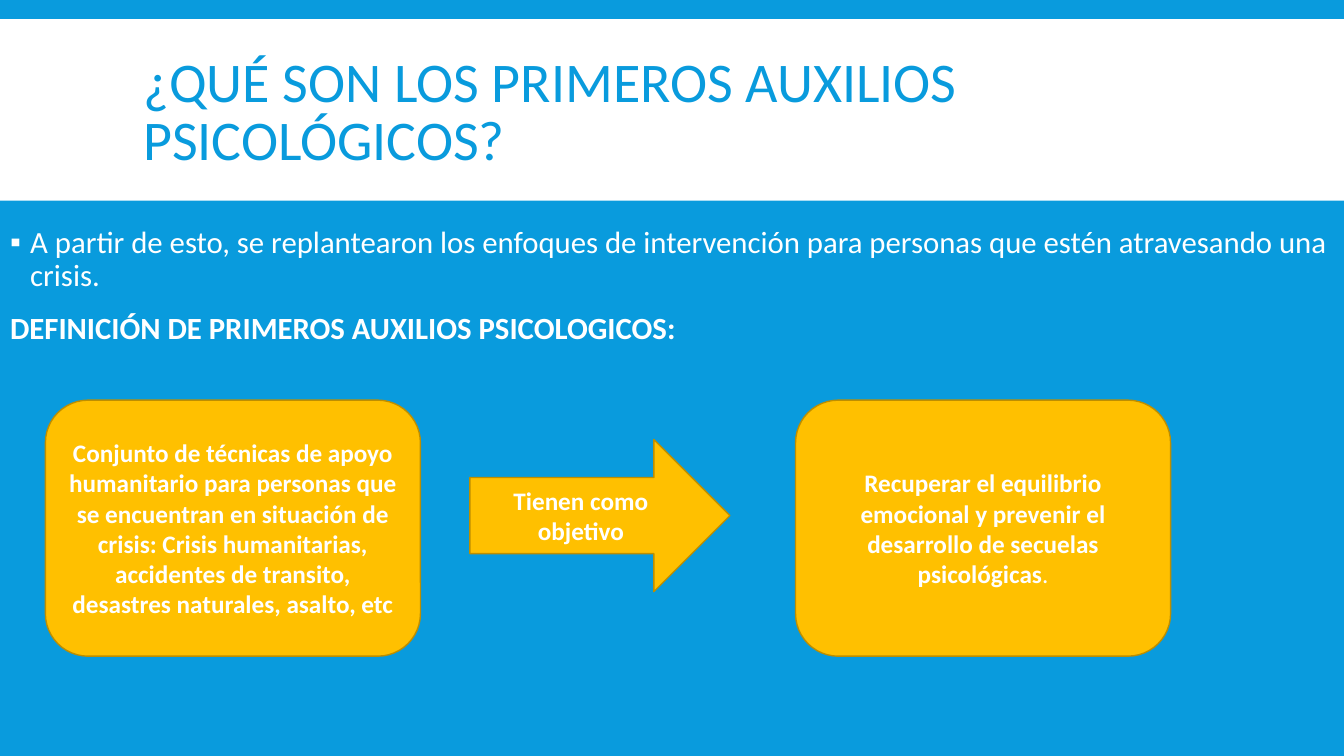
from dataclasses import dataclass

from lxml.etree import SubElement
from pptx import Presentation
from pptx.dml.color import RGBColor as Rgb
from pptx.enum.shapes import MSO_SHAPE as Kind
from pptx.enum.text import MSO_ANCHOR as Anchor, MSO_AUTO_SIZE as Fit, PP_ALIGN as Align
from pptx.oxml.ns import qn
from pptx.util import Inches, Pt


@dataclass(frozen=True)
class Theme:
    font: str = "Calibri"
    blue: str = "099BDD"
    white: str = "FFFFFF"
    gold: str = "FFC000"
    edge: str = "BD8E00"
    head: int = 40
    text: int = 22
    label: int = 18


class Deck:
    def __init__(self, theme):
        self.theme = theme
        self.prs = Presentation()
        self.prs.slide_width, self.prs.slide_height = Inches(13.33), Inches(7.5)
        self.slide = self.prs.slides.add_slide(self.prs.slide_layouts[1])
        back = self.slide.background.fill
        back.solid()
        back.fore_color.rgb = Rgb.from_string(theme.blue)

    def place(self, shape, box):
        shape.left, shape.top, shape.width, shape.height = map(Inches, box)

    def run(self, para, text, size, color, bold=False):
        run = para.add_run()
        run.text = text
        font = run.font
        font.name, font.size, font.bold = self.theme.font, Pt(size), bold
        font.color.rgb = Rgb.from_string(color)

    def shape(self, kind, box, fill, line=None):
        shape = self.slide.shapes.add_shape(kind, *map(Inches, box))
        shape.shadow.inherit = False
        shape.fill.solid()
        shape.fill.fore_color.rgb = Rgb.from_string(fill)
        if line:
            shape.line.color.rgb = Rgb.from_string(line)
            shape.line.width = Pt(1)
        else:
            shape.line.fill.background()
        return shape

    def band(self, box):
        band = self.shape(Kind.RECTANGLE, box, self.theme.white)
        self.slide.shapes.title.element.addprevious(band.element)

    def title(self, text, box):
        title = self.slide.shapes.title
        self.place(title, box)
        frame = title.text_frame
        frame.auto_size, frame.vertical_anchor = Fit.NONE, Anchor.MIDDLE
        para = frame.paragraphs[0]
        para.alignment, para.line_spacing = Align.LEFT, 0.85
        self.run(para, text, self.theme.head, self.theme.blue)

    def bullet(self, para, mark):
        props = para._p.get_or_add_pPr()
        hang = Inches(0.2) if mark else 0
        props.set("marL", str(hang))
        props.set("indent", str(-hang))
        if mark:
            tint = SubElement(props, qn("a:buClr"))
            SubElement(tint, qn("a:srgbClr"), val=self.theme.white)
            SubElement(props, qn("a:buChar"), char=mark)
        else:
            SubElement(props, qn("a:buNone"))

    def body(self, items, box):
        body = self.slide.placeholders[1]
        self.place(body, box)
        frame = body.text_frame
        frame.auto_size, frame.vertical_anchor = Fit.NONE, Anchor.TOP
        for i, (text, mark, bold) in enumerate(items):
            para = frame.add_paragraph() if i else frame.paragraphs[0]
            self.bullet(para, mark)
            para.alignment, para.line_spacing = Align.LEFT, 0.9
            para.space_before, para.space_after = Pt(12 if i else 0), Pt(2)
            self.run(para, text, self.theme.text, self.theme.white, bold)

    def card(self, kind, box, *runs):
        card = self.shape(kind, box, self.theme.gold, self.theme.edge)
        frame = card.text_frame
        frame.word_wrap, frame.vertical_anchor = True, Anchor.MIDDLE
        para = frame.paragraphs[0]
        para.alignment = Align.CENTER
        for text, bold in runs:
            self.run(para, text, self.theme.label, self.theme.white, bold)


def main():
    deck = Deck(Theme())

    # Heading on its white band
    deck.band((0, 0.19, 13.33, 1.8))
    deck.title("¿QUÉ SON LOS PRIMEROS AUXILIOS PSICOLÓGICOS?", (1.32, 0.31, 10.7, 1.65))

    # Introduction
    deck.body([
        ("A partir de esto, se replantearon los enfoques de intervención para "
         "personas que estén atravesando una crisis.", "▪", False),
        ("DEFINICIÓN DE PRIMEROS AUXILIOS PSICOLOGICOS:", None, True),
    ], (0, 2.2, 13.33, 5.3))

    # Definition, arrow and goal
    top, wide, high = 3.97, 3.72, 2.54
    deck.card(Kind.ROUNDED_RECTANGLE, (0.45, top, wide, high),
              ("Conjunto de técnicas de apoyo humanitario para personas que se "
               "encuentran en situación de crisis: Crisis humanitarias, accidentes "
               "de transito, desastres naturales, asalto, etc", True))
    deck.card(Kind.RIGHT_ARROW, (4.66, 4.36, 2.58, 1.51),
              ("Tienen como objetivo", True))
    deck.card(Kind.ROUNDED_RECTANGLE, (7.89, top, wide, high),
              ("Recuperar el equilibrio emocional y prevenir el desarrollo de "
               "secuelas psicológicas", True), (".", False))

    deck.prs.save("out.pptx")


if __name__ == "__main__":
    main()
